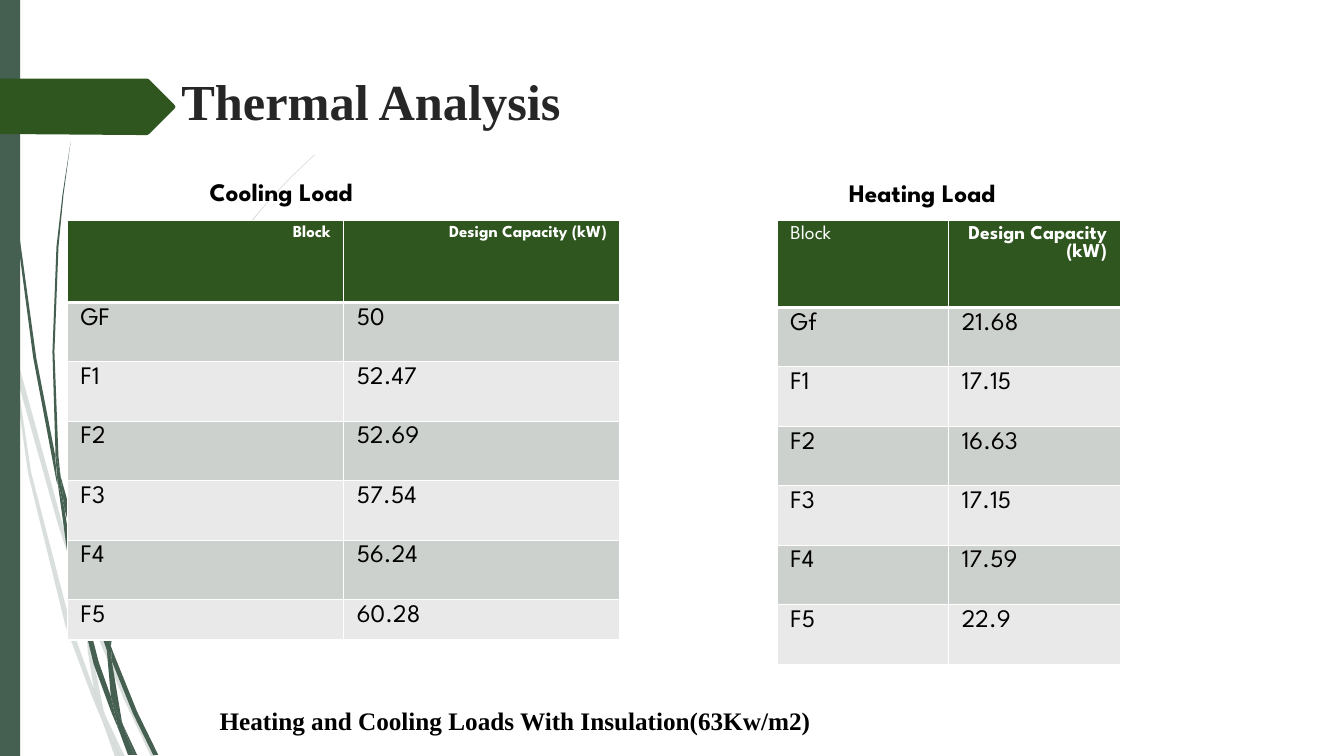
from lxml import etree
from pptx import Presentation
from pptx.dml.color import RGBColor
from pptx.enum import shapes, text
from pptx.oxml import ns
from pptx.util import Inches, Pt

SAGE = RGBColor(0x45, 0x5F, 0x51)
GREEN = RGBColor(0x2E, 0x56, 0x1E)
INK = RGBColor(0x26, 0x26, 0x26)
BLACK = RGBColor(0, 0, 0)
WHITE = RGBColor(255, 255, 255)
BANDS = [RGBColor(0xE8, 0xE9, 0xE8), RGBColor(0xCD, 0xD1, 0xCD)]
SANS, SERIF = "League Spartan", "Times New Roman"
LEFT, RIGHT = text.PP_ALIGN.LEFT, text.PP_ALIGN.RIGHT

# Outlines of the grass blades, in hundredths of an inch
PALE = [
    [(11, 350), (9, 322), (0, 282), (0, 299), (10, 344)],
    [(58, 522), (84, 599), (85, 586), (62, 520), (14, 345), (17, 376)],
    [(92, 607), (88, 596), (88, 610), (123, 694), (150, 751), (155, 751), (127, 692)],
    [(119, 751), (124, 751), (105, 711)],
    [(93, 683), (70, 619), (31, 469), (17, 376), (11, 350), (28, 470), (65, 621),
     (92, 693), (101, 714), (99, 707)],
    [(84, 599), (87, 646), (93, 683), (96, 692), (105, 711), (103, 706), (91, 646),
     (88, 610), (88, 608)],
    [(88, 584), (110, 462), (160, 349), (229, 245), (268, 198), (290, 175), (312, 154),
     (312, 153), (289, 175), (268, 197), (228, 244), (158, 348), (107, 461), (85, 584),
     (85, 586), (88, 596)],
    [(101, 714), (114, 751), (119, 751)],
    [(88, 608), (88, 610), (88, 596), (85, 586), (84, 599)],
    [(96, 692), (93, 683), (99, 707), (101, 714), (119, 751), (105, 711)],
]
DARK = [
    [(7, 110), (17, 233), (33, 355), (56, 477), (57, 481), (55, 457), (55, 453),
     (36, 355), (19, 232), (8, 109), (5, 48), (4, 0), (3, 0), (4, 48)],
    [(88, 592), (106, 645), (106, 633), (106, 631), (93, 590), (60, 472), (64, 505)],
    [(113, 649), (110, 641), (111, 656), (132, 708), (152, 749), (157, 749), (136, 706)],
    [(110, 691), (98, 657), (72, 556), (64, 505), (57, 477), (68, 557), (93, 659),
     (111, 708), (117, 722), (116, 717)],
    [(60, 472), (58, 453), (54, 349), (58, 245), (63, 193), (70, 141), (62, 193),
     (56, 245), (52, 349), (55, 449)],
    [(133, 749), (136, 749), (122, 719)],
    [(57, 477), (64, 505), (60, 472), (55, 449), (55, 453)],
    [(111, 633), (125, 552), (158, 476), (205, 406), (231, 374), (245, 359), (261, 344),
     (260, 344), (245, 358), (231, 373), (204, 405), (156, 474), (122, 551), (106, 631),
     (110, 641)],
    [(117, 722), (127, 749), (131, 749)],
    [(106, 645), (110, 691), (116, 706), (122, 719), (121, 716), (111, 656), (109, 651)],
    [(106, 645), (109, 651), (111, 656), (110, 641), (106, 631), (106, 633)],
    [(116, 706), (110, 691), (116, 717), (117, 722), (130, 749), (133, 749), (122, 719)],
]
ARROW = [(173, 108), (148, 133), (146, 134), (136, 134), (0, 133), (0, 78), (146, 78),
         (148, 79), (173, 104), (174, 106)]

# Text, left, top, width, height, size, font, colour
LABELS = [
    ("Thermal Analysis", 1.7, 0.65, 9.75, 1.4, 36, SERIF, INK),
    ("Cooling Load", 1.98, 1.7, 2.4, 0.4, 18, SANS, BLACK),
    ("Heating Load", 8.32, 1.71, 3.02, 0.4, 18, SANS, BLACK),
    ("Heating and Cooling Loads With Insulation(63Kw/m2)",
     2.08, 6.95, 8.44, 0.4, 18, SERIF, BLACK),
]
HEADS = ["Block", "Design Capacity (kW)"]
FLOORS = ["F1", "F2", "F3", "F4", "F5"]
COOL = {
    "left": 0.67, "col": 2.74, "rows": [0.81] + [0.59] * 5 + [0.39],
    "size": 12, "heads": [(True, RIGHT), (True, RIGHT)],
    "body": zip(["GF"] + FLOORS, ["50", "52.47", "52.69", "57.54", "56.24", "60.28"]),
}
HEAT = {
    "left": 7.71, "col": 1.7, "rows": [0.86] + [0.59] * 6,
    "size": 14, "heads": [(False, LEFT), (True, RIGHT)],
    "body": zip(["Gf"] + FLOORS, ["21.68", "17.15", "16.63", "17.15", "17.59", "22.9"]),
}

deck = Presentation()
deck.slide_width, deck.slide_height = Inches(13.33), Inches(7.5)
slide = deck.slides.add_slide(deck.slide_layouts[6])


def paint(shape, color, alpha=100):
    """Fill a shape flatly, without line or shadow; alpha is in percent."""
    shape.shadow.inherit = False
    shape.line.fill.background()
    shape.fill.solid()
    shape.fill.fore_color.rgb = color
    if alpha < 100:
        tint = shape.fill._xPr.find(".//" + ns.qn("a:srgbClr"))
        etree.SubElement(tint, ns.qn("a:alpha"), val=str(alpha * 1000))


def write(frame, words, size, font, color, bold, align=LEFT):
    para = frame.paragraphs[0]
    para.alignment = align
    run = para.add_run()
    run.text = words
    run.font.color.rgb = color
    for key, val in {"size": Pt(size), "name": font, "bold": bold}.items():
        setattr(run.font, key, val)


blades = [(b, SAGE, 20) for b in PALE] + [(b, SAGE, 100) for b in DARK]
for points, color, alpha in blades:
    path = slide.shapes.build_freeform(*points[0], scale=Inches(0.01))
    path.add_line_segments(points[1:], close=True)
    paint(path.convert_to_shape(), color, alpha)

bar = slide.shapes.add_shape(shapes.MSO_SHAPE.RECTANGLE, 0, 0, Inches(0.2), Inches(7.5))
paint(bar, SAGE)
flag = slide.shapes.build_freeform(*ARROW[0], scale=Inches(0.01))
flag.add_line_segments(ARROW[1:], close=True)
paint(flag.convert_to_shape(), GREEN)

for words, left, top, width, height, size, font, color in LABELS:
    box = slide.shapes.add_textbox(Inches(left), Inches(top), Inches(width), Inches(height))
    box.text_frame.word_wrap = True
    write(box.text_frame, words, size, font, color, True)

for load in (COOL, HEAT):
    rows = load["rows"]
    table = slide.shapes.add_table(
        len(rows), 2, Inches(load["left"]), Inches(2.19),
        Inches(2 * load["col"]), Inches(sum(rows))).table
    for col in table.columns:
        col.width = Inches(load["col"])
    for r, line in enumerate([HEADS, *load["body"]]):
        table.rows[r].height = Inches(rows[r])
        for c, words in enumerate(line):
            cell = table.cell(r, c)
            cell.margin_left = cell.margin_right = Inches(0.13)
            cell.margin_top = cell.margin_bottom = Inches(0.05)
            props = cell._tc.get_or_add_tcPr()
            for side in "LRTB":
                thick = (r, side) in [(0, "B"), (1, "T")]
                edge = etree.SubElement(props, ns.qn("a:ln" + side),
                                        w=str(Pt(3 if thick else 1)))
                solid = etree.SubElement(edge, ns.qn("a:solidFill"))
                etree.SubElement(solid, ns.qn("a:srgbClr"), val=str(WHITE))
            cell.fill.solid()
            cell.fill.fore_color.rgb = BANDS[r % 2] if r else GREEN
            if r:
                write(cell.text_frame, words, 18, SANS, BLACK, False)
            else:
                write(cell.text_frame, words, load["size"], SANS, WHITE, *load["heads"][c])

deck.save("out.pptx")
